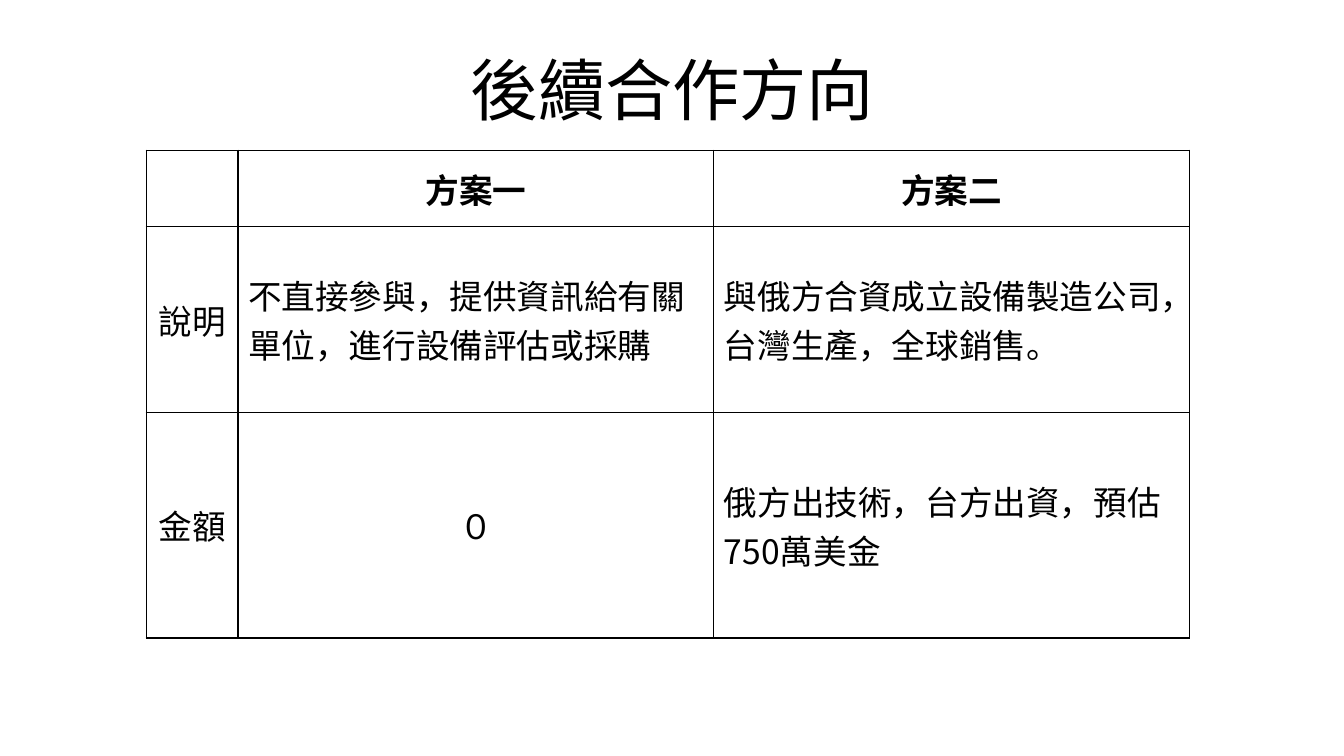
from lxml import etree
from pptx import Presentation
from pptx.dml.color import RGBColor
from pptx.enum import text as t
from pptx.oxml import ns
from pptx.util import Inches, Pt

# Content
HEADING = "後續合作方向"
PLANS = [
    ("", "方案一", "方案二"),
    ("說明", "不直接參與，提供資訊給有關單位，進行設備評估或採購",
     "與俄方合資成立設備製造公司，台灣生產，全球銷售。"),
    ("金額", "０", "俄方出技術，台方出資，預估750萬美金"),
]
CENTERED = {"０"}

# Style and sizes
FONT = "Noto Sans CJK SC"
BLACK = RGBColor(0, 0, 0)
WHITE = RGBColor(255, 255, 255)
COLUMN_WIDTHS = (0.91, 4.72, 4.72)
ROW_HEIGHTS = (0.76, 1.84, 2.24)


def style(paragraph, size, centered, bold=False):
    paragraph.alignment = t.PP_ALIGN.CENTER if centered else t.PP_ALIGN.LEFT
    font = paragraph.font
    font.name, font.size, font.bold = FONT, Pt(size), bold
    font.color.rgb = BLACK
    # East Asian typeface follows the Latin one
    latin = paragraph._p.pPr.find(ns.qn("a:defRPr")).find(ns.qn("a:latin"))
    east_asian = etree.Element(ns.qn("a:ea"), typeface=FONT)
    latin.addnext(east_asian)


def add_borders(cell):
    properties = cell._tc.get_or_add_tcPr()
    for position, side in enumerate(("lnL", "lnR", "lnT", "lnB")):
        line = etree.Element(ns.qn(f"a:{side}"), w=str(Pt(1)))
        fill = etree.SubElement(line, ns.qn("a:solidFill"))
        etree.SubElement(fill, ns.qn("a:srgbClr"), val=str(BLACK))
        properties.insert(position, line)


presentation = Presentation()
presentation.slide_width = Inches(13.33)
presentation.slide_height = Inches(7.5)
slide = presentation.slides.add_slide(presentation.slide_layouts[6])

# Plan table
plans = slide.shapes.add_table(
    len(PLANS), len(PLANS[0]), Inches(1.45), Inches(1.49),
    Inches(sum(COLUMN_WIDTHS)), Inches(sum(ROW_HEIGHTS))).table
plans.first_row = plans.horz_banding = False
for column, width in zip(plans.columns, COLUMN_WIDTHS):
    column.width = Inches(width)
for row, height in zip(plans.rows, ROW_HEIGHTS):
    row.height = Inches(height)
for r, entries in enumerate(PLANS):
    for c, entry in enumerate(entries):
        cell = plans.cell(r, c)
        cell.text = entry
        cell.vertical_anchor = t.MSO_ANCHOR.MIDDLE
        cell.fill.solid()
        cell.fill.fore_color.rgb = WHITE
        add_borders(cell)
        style(cell.text_frame.paragraphs[0], 24,
              r == 0 or c == 0 or entry in CENTERED, bold=r == 0)

# Heading
heading = slide.shapes.add_textbox(
    Inches(0.67), Inches(0.37), Inches(12), Inches(1.01)).text_frame
heading.word_wrap = True
heading.vertical_anchor = t.MSO_ANCHOR.MIDDLE
heading.text = HEADING
style(heading.paragraphs[0], 48, centered=True)

presentation.save("out.pptx")
